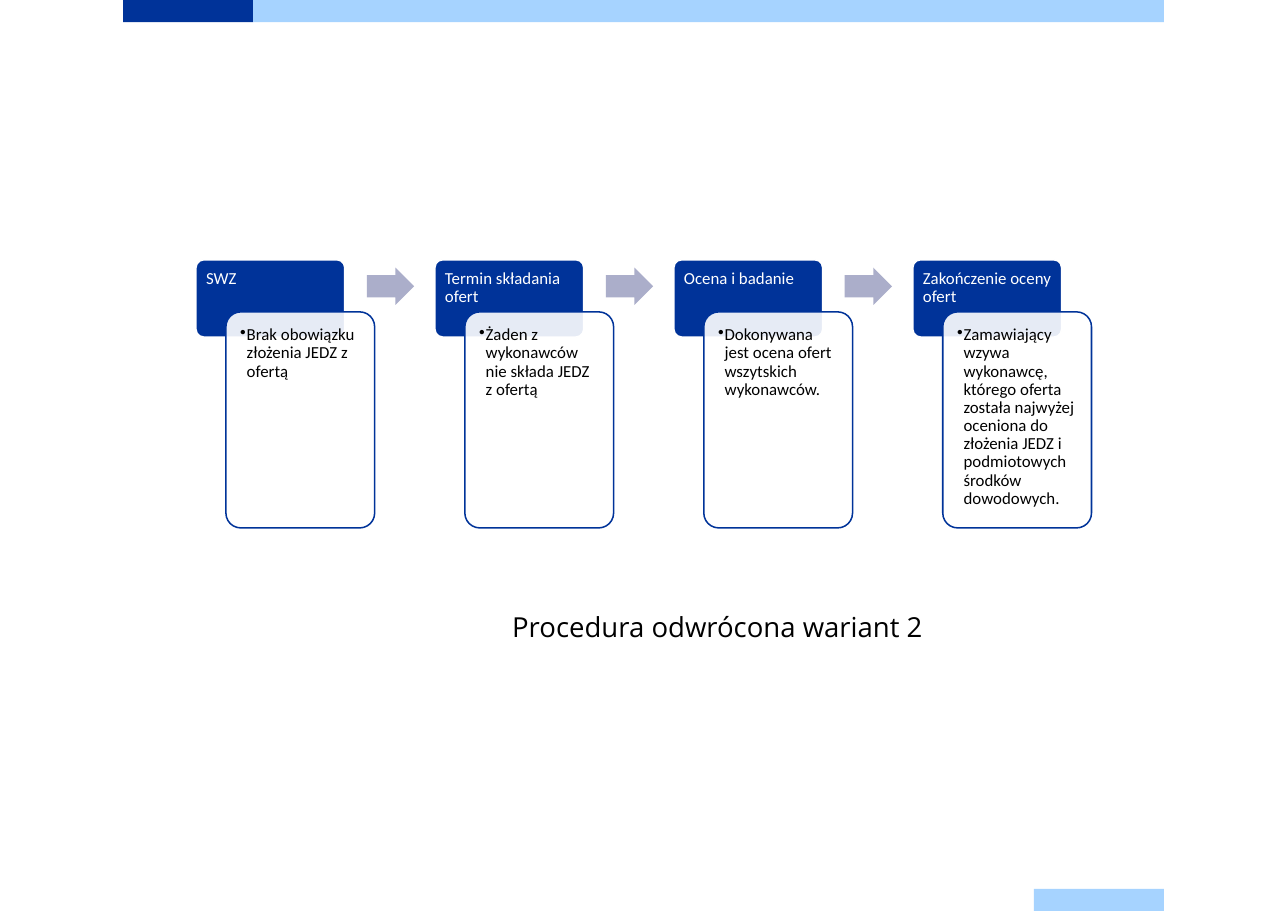
from dataclasses import dataclass

from lxml.etree import SubElement
from pptx import Presentation
from pptx.dml.color import RGBColor
from pptx.enum.shapes import MSO_SHAPE
from pptx.enum.text import MSO_ANCHOR, MSO_AUTO_SIZE, PP_ALIGN
from pptx.oxml.ns import qn
from pptx.shapes.autoshape import Shape
from pptx.slide import Slide
from pptx.util import Cm, Pt


@dataclass(frozen=True)
class Theme:
    navy: str = "003399"
    sky: str = "A6D3FF"
    arrow: str = "ABAECA"
    white: str = "FFFFFF"
    black: str = "000000"
    title_font: str = "Open Sans"
    body_font: str = "Calibri"
    title_size: float = 18
    body_size: float = 11


@dataclass(frozen=True)
class Box:
    """Position and size in centimetres."""
    left: float
    top: float
    width: float
    height: float

    def shifted(self, distance: float) -> "Box":
        return Box(self.left + distance, self.top, self.width, self.height)


@dataclass(frozen=True)
class Bar:
    box: Box
    color: str


@dataclass(frozen=True)
class Stage:
    name: str
    detail: str


THEME = Theme()
PAGE_WIDTH, PAGE_HEIGHT = 29.7, 21.0
BAR_HEIGHT = 0.51

BARS = [
    Bar(Box(2.84, 0, 3, BAR_HEIGHT), THEME.navy),
    Bar(Box(5.84, 0, 21, BAR_HEIGHT), THEME.sky),
    Bar(Box(23.84, PAGE_HEIGHT - BAR_HEIGHT, 3, BAR_HEIGHT), THEME.sky),
]

STAGES = [
    Stage("SWZ", "Brak obowiązku złożenia JEDZ z ofertą"),
    Stage("Termin składania ofert", "Żaden z wykonawców nie składa JEDZ z ofertą"),
    Stage("Ocena i badanie", "Dokonywana jest ocena ofert wszytskich wykonawców."),
    Stage("Zakończenie oceny ofert",
          "Zamawiający wzywa wykonawcę, którego oferta została najwyżej oceniona "
          "do złożenia JEDZ i podmiotowych środków dowodowych."),
]

# Geometry of the first stage; the others follow at equal steps
STAGE_STEP = 5.51
HEADER = Box(4.52, 5.99, 3.43, 1.78)
CARD = Box(5.21, 7.19, 3.43, 4.98)
ARROW = Box(8.46, 6.17, 1.09, 0.86)
TITLE = Box(11.56, 13.94, 10.06, 1.02)


def add_box(slide: Slide, kind: MSO_SHAPE, box: Box, fill: str,
            line: str | None = None, opacity: int = 100,
            adjustments: tuple[float, ...] = ()) -> Shape:
    shape = slide.shapes.add_shape(
        kind, Cm(box.left), Cm(box.top), Cm(box.width), Cm(box.height))
    shape.shadow.inherit = False
    for index, value in enumerate(adjustments):
        shape.adjustments[index] = value
    shape.fill.solid()
    shape.fill.fore_color.rgb = RGBColor.from_string(fill)
    if opacity < 100:
        color = shape.fill._xPr.find(qn("a:solidFill"))[0]
        SubElement(color, qn("a:alpha"), val=str(opacity * 1000))
    if line:
        shape.line.color.rgb = RGBColor.from_string(line)
        shape.line.width = Pt(1)
    else:
        shape.line.fill.background()
    return shape


def write_text(shape: Shape, text: str, *, font: str = THEME.body_font,
               size: float = THEME.body_size, color: str = THEME.black,
               horizontal_inset: float = 0.23, vertical_inset: float = 0.23,
               line_spacing: float = 0.9, wrap: bool = True,
               bullet: bool = False) -> None:
    frame = shape.text_frame
    frame.word_wrap = wrap
    frame.auto_size = MSO_AUTO_SIZE.NONE
    frame.vertical_anchor = MSO_ANCHOR.TOP
    frame.margin_left = frame.margin_right = Cm(horizontal_inset)
    frame.margin_top = frame.margin_bottom = Cm(vertical_inset)
    paragraph = frame.paragraphs[0]
    paragraph.text = text
    if bullet:
        properties = paragraph._p.get_or_add_pPr()
        properties.set("marL", str(Cm(0.15)))
        properties.set("indent", str(Cm(-0.15)))
        SubElement(properties, qn("a:buChar"), char="•")
    paragraph.alignment = PP_ALIGN.LEFT
    paragraph.line_spacing = line_spacing
    paragraph.font.name = font
    paragraph.font.size = Pt(size)
    paragraph.font.color.rgb = RGBColor.from_string(color)


def add_title(slide: Slide, text: str) -> None:
    title = slide.shapes.title
    title.left, title.top = Cm(TITLE.left), Cm(TITLE.top)
    title.width, title.height = Cm(TITLE.width), Cm(TITLE.height)
    write_text(title, text, font=THEME.title_font, size=THEME.title_size,
               horizontal_inset=0.25, vertical_inset=0.13,
               line_spacing=1.0, wrap=False)


def add_stage(slide: Slide, stage: Stage, offset: float) -> None:
    header = add_box(slide, MSO_SHAPE.ROUNDED_RECTANGLE, HEADER.shifted(offset),
                     THEME.navy, line=THEME.white, adjustments=(0.1,))
    write_text(header, stage.name, color=THEME.white,
               horizontal_inset=0.18, vertical_inset=0.18)
    card = add_box(slide, MSO_SHAPE.ROUNDED_RECTANGLE, CARD.shifted(offset),
                   THEME.white, line=THEME.navy, opacity=90, adjustments=(0.1,))
    write_text(card, stage.detail, bullet=True)


def main() -> None:
    presentation = Presentation()
    presentation.slide_width = Cm(PAGE_WIDTH)
    presentation.slide_height = Cm(PAGE_HEIGHT)
    slide = presentation.slides.add_slide(presentation.slide_layouts[5])

    # Page bars and title
    for bar in BARS:
        add_box(slide, MSO_SHAPE.RECTANGLE, bar.box, bar.color)
    add_title(slide, "Procedura odwrócona wariant 2")

    # Stages with an arrow between neighbours
    for index, stage in enumerate(STAGES):
        offset = index * STAGE_STEP
        add_stage(slide, stage, offset)
        if index < len(STAGES) - 1:
            add_box(slide, MSO_SHAPE.RIGHT_ARROW, ARROW.shifted(offset),
                    THEME.arrow, adjustments=(0.6, 0.5))

    presentation.save("out.pptx")


if __name__ == "__main__":
    main()
